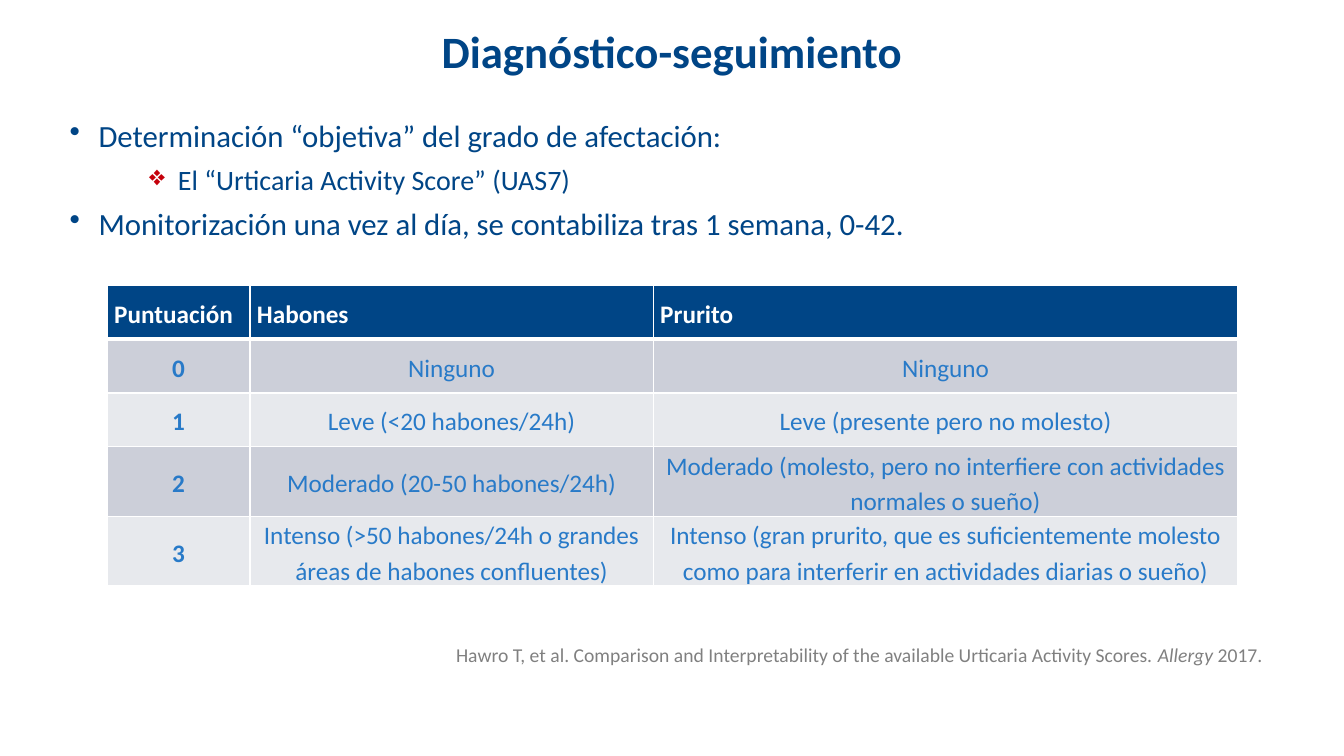
from dataclasses import dataclass

from lxml.etree import SubElement
from pptx import Presentation
from pptx.dml.color import RGBColor
from pptx.enum.text import MSO_ANCHOR, PP_ALIGN
from pptx.oxml.ns import qn
from pptx.util import Inches, Pt

TITLE = "Diagnóstico-seguimiento"
POINTS = [
    (0, "Determinación “objetiva” del grado de afectación:"),
    (1, "El “Urticaria Activity Score” (UAS7)"),
    (0, "Monitorización una vez al día, se contabiliza tras 1 semana, 0-42."),
]
SCORES = [
    ("Puntuación", "Habones", "Prurito"),
    ("0", "Ninguno", "Ninguno"),
    ("1", "Leve (<20 habones/24h)", "Leve (presente pero no molesto)"),
    ("2", "Moderado (20-50 habones/24h)",
     "Moderado (molesto, pero no interfiere con actividades normales o sueño)"),
    ("3", "Intenso (>50 habones/24h o grandes áreas de habones confluentes)",
     "Intenso (gran prurito, que es suficientemente molesto como para interferir "
     "en actividades diarias o sueño)"),
]
CITATION = [
    ("Hawro T, et al. Comparison and Interpretability of the available "
     "Urticaria Activity Scores. ", False),
    ("Allergy ", True),
    ("2017. ", False),
]


@dataclass(frozen=True)
class Theme:
    font: str = "Calibri"
    navy: str = "004586"
    blue: str = "287AC8"
    red: str = "C5000B"
    gray: str = "808080"
    white: str = "FFFFFF"
    bands: tuple = ("E7E9ED", "CCCFD9")
    title_size: int = 32
    point_sizes: tuple = (22, 20)
    table_size: int = 18
    citation_size: int = 14


THEME = Theme()

# The slide is a grid of 80 columns by 45 rows of square units.
UNIT = Inches(1 / 6)
TITLE_AREA = (4, 1, 72, 4)
POINTS_AREA = (0, 6.67, 76, 10.3)
CITATION_AREA = (0, 38, 76, 1.9)
TABLE_LEFT, TABLE_TOP = 6.38, 17
COLUMN_WIDTHS = (8.5, 24, 34.8)
ROW_HEIGHTS = (3.2, 3.2, 3.2, 4, 4)
LEVEL_INDENTS = (5.28, 10)
HANGING = 1.72


def grid(*units):
    return [round(unit * UNIT) for unit in units]


def add_text(paragraph, text, *, size, color, bold=False, italic=False,
             align=PP_ALIGN.LEFT):
    paragraph.alignment = align
    run = paragraph.add_run()
    run.text = text
    run.font.name = THEME.font
    run.font.size = Pt(size)
    run.font.bold = bold
    run.font.italic = italic
    run.font.color.rgb = RGBColor.from_string(color)


def add_frame(slide, area, anchor=MSO_ANCHOR.TOP):
    frame = slide.shapes.add_textbox(*grid(*area)).text_frame
    frame.word_wrap = True
    frame.vertical_anchor = anchor
    return frame


def add_bullet(paragraph, level):
    properties = paragraph._p.get_or_add_pPr()
    left, hanging = grid(LEVEL_INDENTS[level], HANGING)
    properties.set("marL", str(left))
    properties.set("indent", str(-hanging))
    color = SubElement(properties, qn("a:buClr"))
    SubElement(color, qn("a:srgbClr"), val=(THEME.navy, THEME.red)[level])
    SubElement(properties, qn("a:buChar"), char="•❖"[level])


def add_borders(cell, bottom_width):
    properties = cell._tc.get_or_add_tcPr()
    for side, width in (("L", 1), ("R", 1), ("T", 1), ("B", bottom_width)):
        line = SubElement(properties, qn(f"a:ln{side}"), w=str(Pt(width)))
        fill = SubElement(line, qn("a:solidFill"))
        SubElement(fill, qn("a:srgbClr"), val=THEME.white)


def fill_cell(cell, text, row, column):
    header = row == 0
    cell.margin_left = cell.margin_right = Inches(0.07)
    cell.margin_top = cell.margin_bottom = 0
    cell.vertical_anchor = MSO_ANCHOR.MIDDLE
    add_borders(cell, bottom_width=3 if header else 1)
    cell.fill.solid()
    cell.fill.fore_color.rgb = RGBColor.from_string(
        THEME.navy if header else THEME.bands[row % 2])
    paragraph = cell.text_frame.paragraphs[0]
    paragraph.line_spacing = 1.15
    paragraph.space_after = Pt(10)
    add_text(paragraph, text, size=THEME.table_size,
             color=THEME.white if header else THEME.blue,
             bold=header or column == 0,
             align=PP_ALIGN.LEFT if header else PP_ALIGN.CENTER)


def add_score_table(slide):
    area = grid(TABLE_LEFT, TABLE_TOP, sum(COLUMN_WIDTHS), sum(ROW_HEIGHTS))
    table = slide.shapes.add_table(len(SCORES), len(COLUMN_WIDTHS), *area).table
    for column, width in zip(table.columns, grid(*COLUMN_WIDTHS)):
        column.width = width
    for row, height in zip(table.rows, grid(*ROW_HEIGHTS)):
        row.height = height
    for row, texts in enumerate(SCORES):
        for column, text in enumerate(texts):
            fill_cell(table.cell(row, column), text, row, column)


def main():
    presentation = Presentation()
    presentation.slide_width, presentation.slide_height = grid(80, 45)
    slide = presentation.slides.add_slide(presentation.slide_layouts[6])

    title = add_frame(slide, TITLE_AREA, MSO_ANCHOR.MIDDLE)
    add_text(title.paragraphs[0], TITLE, size=THEME.title_size,
             color=THEME.navy, bold=True, align=PP_ALIGN.CENTER)

    points = add_frame(slide, POINTS_AREA)
    for index, (level, text) in enumerate(POINTS):
        paragraph = points.add_paragraph() if index else points.paragraphs[0]
        paragraph.level = level
        if index:
            paragraph.space_before = Pt(6)
        add_bullet(paragraph, level)
        add_text(paragraph, text, size=THEME.point_sizes[level], color=THEME.navy)

    add_score_table(slide)

    citation = add_frame(slide, CITATION_AREA).paragraphs[0]
    for text, italic in CITATION:
        add_text(citation, text, size=THEME.citation_size, color=THEME.gray,
                 italic=italic, align=PP_ALIGN.RIGHT)

    presentation.save("out.pptx")


if __name__ == "__main__":
    main()
